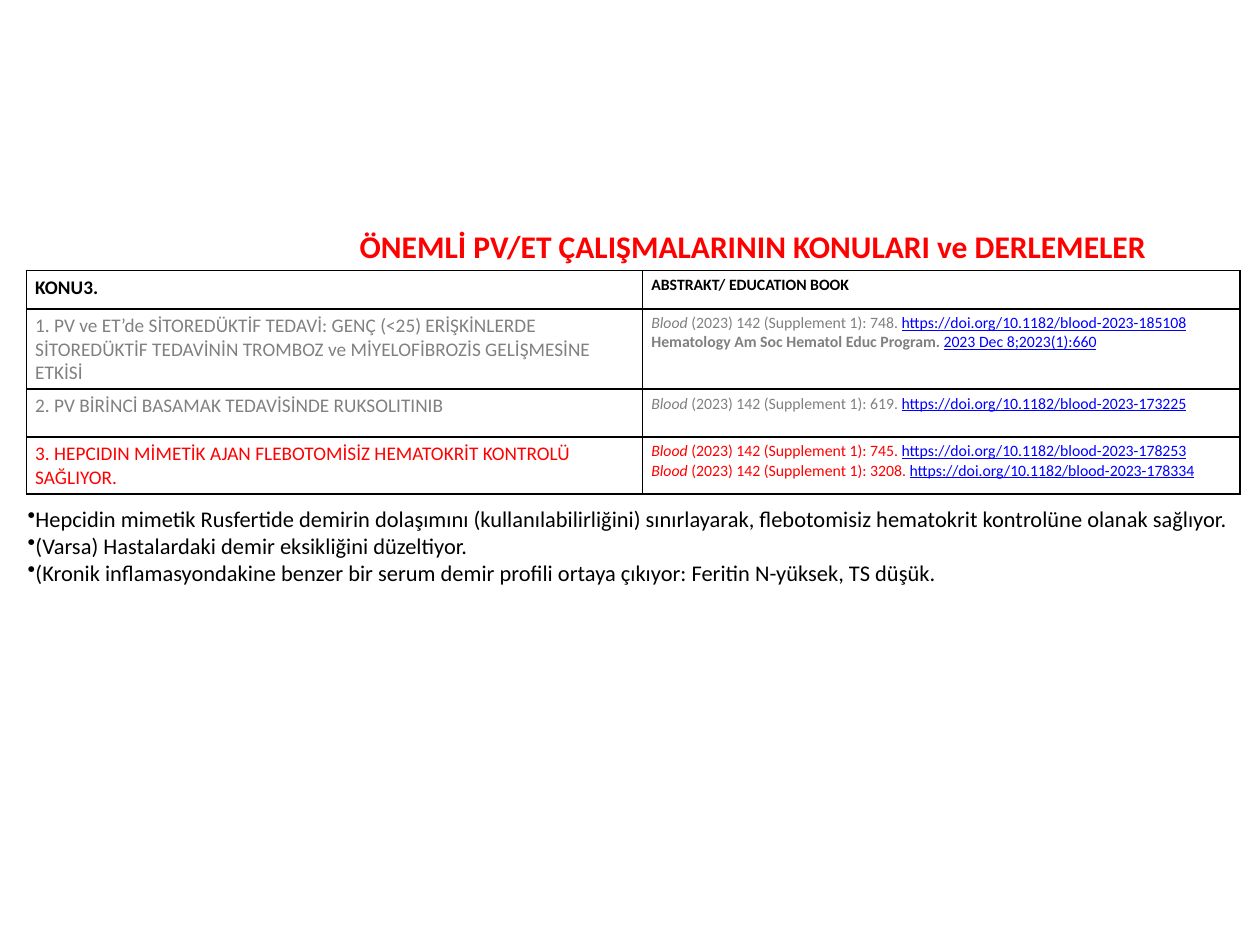
from lxml import etree
from pptx import Presentation
from pptx.dml.color import RGBColor
from pptx.enum.text import MSO_ANCHOR, MSO_AUTO_SIZE, PP_ALIGN
from pptx.oxml.ns import qn
from pptx.util import Inches, Pt

CENTER, MIDDLE = PP_ALIGN.CENTER, MSO_ANCHOR.MIDDLE
FIT_SHAPE = MSO_AUTO_SIZE.SHAPE_TO_FIT_TEXT
FONT = "Calibri"
COLORS = {"text": "000000", "muted": "808080", "accent": "FF0000", "link": "0000FF"}

prs = Presentation()
prs.slide_width, prs.slide_height = Inches(10), Inches(7.5)
s = prs.slides.add_slide(prs.slide_layouts[6])
COL, ROW = prs.slide_width / 100, prs.slide_height / 100


def style(font, size, color, bold=False):
    font.name, font.size, font.bold = FONT, Pt(size), bold
    font.color.rgb = RGBColor.from_string(COLORS[color])


def add_text(left, top, width, height):
    sp = s.shapes.add_textbox(int(left * COL), int(top * ROW), int(width * COL), int(height * ROW))
    sp.text_frame.word_wrap = True
    return sp.text_frame


# Title
tf = add_text(21.2, 23.73, 77.1, 4.53)
tf.vertical_anchor = MIDDLE
p = tf.paragraphs[0]
p.text = "ÖNEMLİ PV/ET ÇALIŞMALARININ KONULARI ve DERLEMELER"
p.alignment = CENTER
style(p.font, 18, "accent", True)

# Table content: color, topic, references as (journal, citation, link)
HEADERS = [("KONU3.", 11), ("ABSTRAKT/ EDUCATION BOOK", 9)]
TOPICS = [
    ("muted",
     "1. PV ve ET’de SİTOREDÜKTİF TEDAVİ: GENÇ (<25) ERİŞKİNLERDE SİTOREDÜKTİF "
     "TEDAVİNİN TROMBOZ ve MİYELOFİBROZİS GELİŞMESİNE ETKİSİ",
     [("Blood", " (2023) 142 (Supplement 1): 748. ", "https://doi.org/10.1182/blood-2023-185108"),
      ("Hematology Am Soc Hematol Educ Program. ", "", "2023 Dec 8;2023(1):660")]),
    ("muted",
     "2. PV BİRİNCİ BASAMAK TEDAVİSİNDE RUKSOLITINIB",
     [("Blood", " (2023) 142 (Supplement 1): 619. ", "https://doi.org/10.1182/blood-2023-173225")]),
    ("accent",
     "3. HEPCIDIN MİMETİK AJAN FLEBOTOMİSİZ HEMATOKRİT KONTROLÜ SAĞLIYOR.",
     [("Blood", " (2023) 142 (Supplement 1): 745. ", "https://doi.org/10.1182/blood-2023-178253"),
      ("Blood", " (2023) 142 (Supplement 1): 3208. ", "https://doi.org/10.1182/blood-2023-178334")]),
]
COLUMN_SHARES = [48.9, 47.4]
ROW_SHARES = [4.05, 8.5, 5.07, 6.05]

# Table grid
table = s.shapes.add_table(
    len(ROW_SHARES), len(COLUMN_SHARES), int(2.1 * COL), int(28.63 * ROW),
    int(sum(COLUMN_SHARES) * COL), int(sum(ROW_SHARES) * ROW)).table
for column, share in zip(table.columns, COLUMN_SHARES):
    column.width = int(share * COL)
for row, share in zip(table.rows, ROW_SHARES):
    row.height = int(share * ROW)

# Cell margins, borders and fill
for cell in table.iter_cells():
    cell.margin_left = cell.margin_right = Inches(0.07)
    cell.margin_top = cell.margin_bottom = Inches(0.04)
    tcPr = cell._tc.get_or_add_tcPr()
    for side in ("a:lnL", "a:lnR", "a:lnT", "a:lnB"):
        ln = etree.SubElement(tcPr, qn(side), w=str(Pt(1)))
        fill = etree.SubElement(ln, qn("a:solidFill"))
        etree.SubElement(fill, qn("a:srgbClr"), val=COLORS["text"])
    cell.fill.background()

# Header row
for i, (text, size) in enumerate(HEADERS):
    p = table.cell(0, i).text_frame.paragraphs[0]
    p.text = text
    style(p.font, size, "text", True)

# Topic rows
for i, (color, topic, references) in enumerate(TOPICS, start=1):
    p = table.cell(i, 0).text_frame.paragraphs[0]
    p.text = topic
    style(p.font, 11, color)
    tf = table.cell(i, 1).text_frame
    for j, (journal, citation, link) in enumerate(references):
        p = tf.add_paragraph() if j else tf.paragraphs[0]
        r = p.add_run()
        r.text = journal
        style(r.font, 9, color, bold=not citation)
        r.font.italic = bool(citation)
        if citation:
            r = p.add_run()
            r.text = citation
            style(r.font, 9, color)
        r = p.add_run()
        r.text = link
        style(r.font, 9, "link")
        r.font.underline = True

# Findings
FINDINGS = [
    "Hepcidin mimetik Rusfertide demirin dolaşımını (kullanılabilirliğini) sınırlayarak, "
    "flebotomisiz hematokrit kontrolüne olanak sağlıyor.",
    "(Varsa) Hastalardaki demir eksikliğini düzeltiyor.",
    "(Kronik inflamasyondakine benzer bir serum demir profili ortaya çıkıyor: "
    "Feritin N-yüksek, TS düşük.",
]
tf = add_text(1.2, 52.8, 98.8, 9.87)
tf.auto_size = FIT_SHAPE
for i, finding in enumerate(FINDINGS):
    p = tf.add_paragraph() if i else tf.paragraphs[0]
    p.text = finding
    style(p.font, 12.8, "text")
    bullet = etree.Element(qn("a:buChar"), char="•")
    p._p.get_or_add_pPr().insert(0, bullet)

prs.save("out.pptx")
